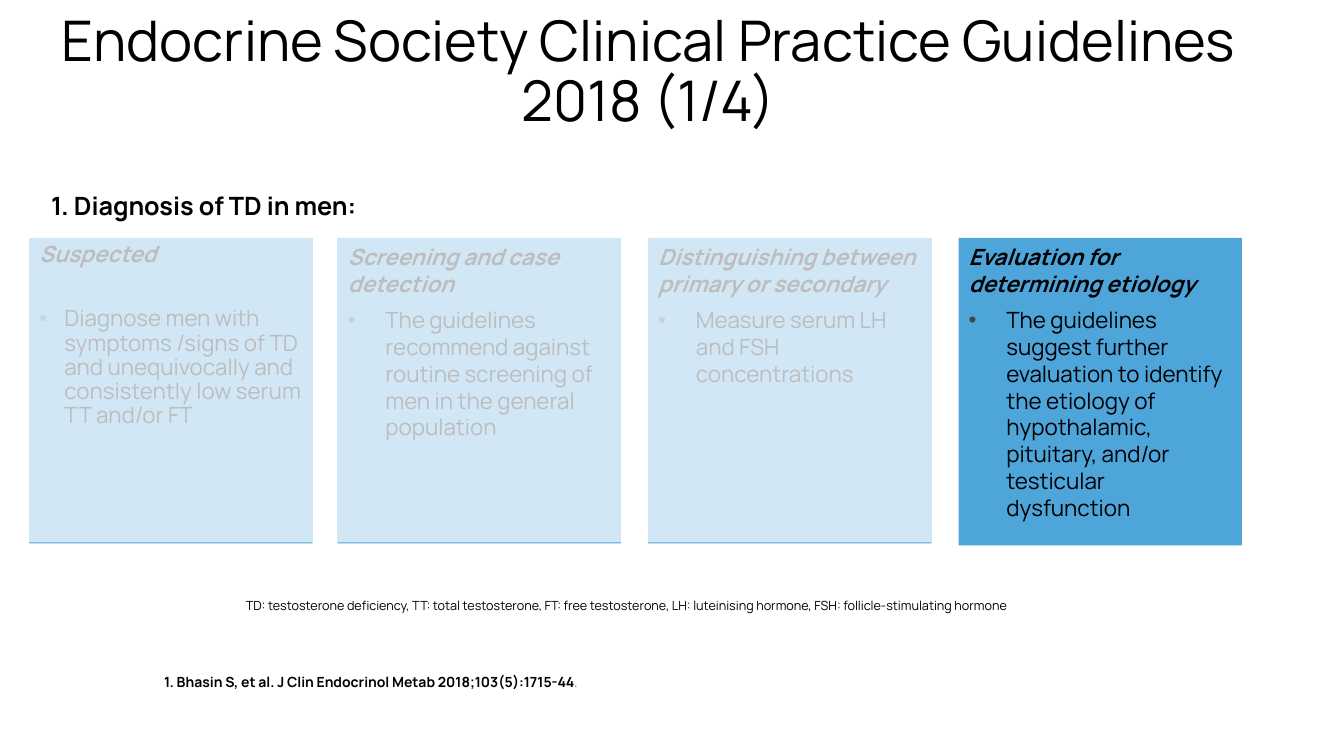
from lxml.etree import SubElement
from pptx import Presentation
from pptx.dml.color import RGBColor
from pptx.enum.shapes import MSO_SHAPE as Shape
from pptx.enum.text import MSO_ANCHOR as Anchor, MSO_AUTO_SIZE as AutoSize, PP_ALIGN as Align
from pptx.oxml.ns import qn
from pptx.util import Pt

BLACK = RGBColor(0x00, 0x00, 0x00)
WHITE = RGBColor(0xFF, 0xFF, 0xFF)
GREY = RGBColor(0x7F, 0x7F, 0x7F)
CARD_BLUE = RGBColor(0x4E, 0xA5, 0xDA)
BULLET_BLUE = RGBColor(0x00, 0x6E, 0xAB)
BULLET_GREY = RGBColor(0x45, 0x44, 0x44)
FONT = "Manrope"
CARD_TOP, CARD_WIDTH = 169.9, 202.3
VEIL_TOP, VEIL_HEIGHT, VEIL_ALPHA = 169.2, 218.2, 74000


def style(para, size, bold=False, italic=False):
    font = para.font
    font.name, font.size, font.color.rgb = FONT, Pt(size), BLACK
    font.bold, font.italic = bold, italic


def add_block(left, top, width, height, color):
    """Add a plain borderless rectangle, measured in points."""
    block = slide.shapes.add_shape(Shape.RECTANGLE, Pt(left), Pt(top), Pt(width), Pt(height))
    block.shadow.inherit = False
    block.fill.solid()
    block.fill.fore_color.rgb = color
    block.line.fill.background()
    return block


deck = Presentation()
deck.slide_width, deck.slide_height = Pt(960), Pt(540)
slide = deck.slides.add_slide(deck.slide_layouts[5])

title = slide.shapes.title
title.left, title.top, title.width, title.height = Pt(25.9), Pt(18.7), Pt(874.8), Pt(67.7)
title.text_frame.text = "Endocrine Society Clinical Practice Guidelines 2018 (1/4)"
title.text_frame.vertical_anchor = Anchor.MIDDLE
title.text_frame.auto_size = AutoSize.NONE
para = title.text_frame.paragraphs[0]
para.alignment, para.line_spacing = Align.CENTER, 0.9
style(para, 40)

# left, height, line spacing, bullet, bullet colour, indent, space before bullet, veiled, heading, text
cards = [
    (20.9, 218.2, 0.9, "▪", BULLET_BLUE, 18, 26, True, "Suspected",
     "Diagnose men with symptoms /signs of TD and unequivocally and consistently low serum TT and/or FT"),
    (241.2, 218.2, 1.0, "•", BULLET_GREY, 27, 3.8, True, "Screening and case detection",
     "The guidelines recommend against routine screening of men in the general population"),
    (463, 218.2, 1.0, "•", BULLET_GREY, 27, 3.8, True, "Distinguishing between primary or secondary",
     "Measure serum LH and FSH concentrations"),
    (684.7, 219.6, 1.0, "•", BULLET_GREY, 27, 3.8, False, "Evaluation for determining etiology",
     "The guidelines suggest further evaluation to identify the etiology of hypothalamic, "
     "pituitary, and/or testicular dysfunction"),
]
for left, height, spacing, bullet, bullet_color, indent, gap, veiled, heading, text in cards:
    card = add_block(left, CARD_TOP, CARD_WIDTH, height, CARD_BLUE)
    frame = card.text_frame
    frame.word_wrap, frame.vertical_anchor = True, Anchor.TOP
    frame.text = f"{heading}\n{text}"
    head, body = frame.paragraphs
    for para in (head, body):
        para.alignment, para.line_spacing, para.space_after = Align.LEFT, spacing, Pt(3)
    body.space_before = Pt(gap)
    props = body._p.get_or_add_pPr()
    props.set("marL", str(Pt(indent)))
    props.set("indent", str(-Pt(indent)))
    SubElement(SubElement(props, qn("a:buClr")), qn("a:srgbClr"), val=str(bullet_color))
    SubElement(props, qn("a:buFont"), typeface="Arial")
    SubElement(props, qn("a:buChar"), char=bullet)
    style(head, 16, bold=True, italic=True)
    style(body, 16)
    if veiled:
        veil = add_block(left, VEIL_TOP, CARD_WIDTH, VEIL_HEIGHT, WHITE)
        veil_color = veil.fill._xPr.find(qn("a:solidFill"))[0]
        SubElement(veil_color, qn("a:alpha"), val=str(VEIL_ALPHA))

notes = [
    (29.5, 132.5, 238.3, 28.8, 18, True, "1. Diagnosis of TD in men:"),
    (110.2, 477.4, 314.6, 19.4, 10, True,
     "1. Bhasin S, et al. J Clin Endocrinol Metab 2018;103(5):1715-44"),
    (168.5, 423.4, 588.2, 18, 9, False,
     "TD: testosterone deficiency, TT: total testosterone, FT: free testosterone, "
     "LH: luteinising hormone, FSH: follicle-stimulating hormone"),
]
for left, top, width, height, size, bold, text in notes:
    box = slide.shapes.add_textbox(Pt(left), Pt(top), Pt(width), Pt(height))
    box.text_frame.word_wrap = False
    box.text_frame.auto_size = AutoSize.SHAPE_TO_FIT_TEXT
    para = box.text_frame.paragraphs[0]
    para.add_run().text = text
    style(para, size, bold)
    if "Bhasin" in text:
        span = para.add_run()
        span.text = "."
        span.font.name, span.font.size, span.font.bold = "Arial", Pt(9), False
        span.font.color.rgb = GREY

deck.save("out.pptx")
